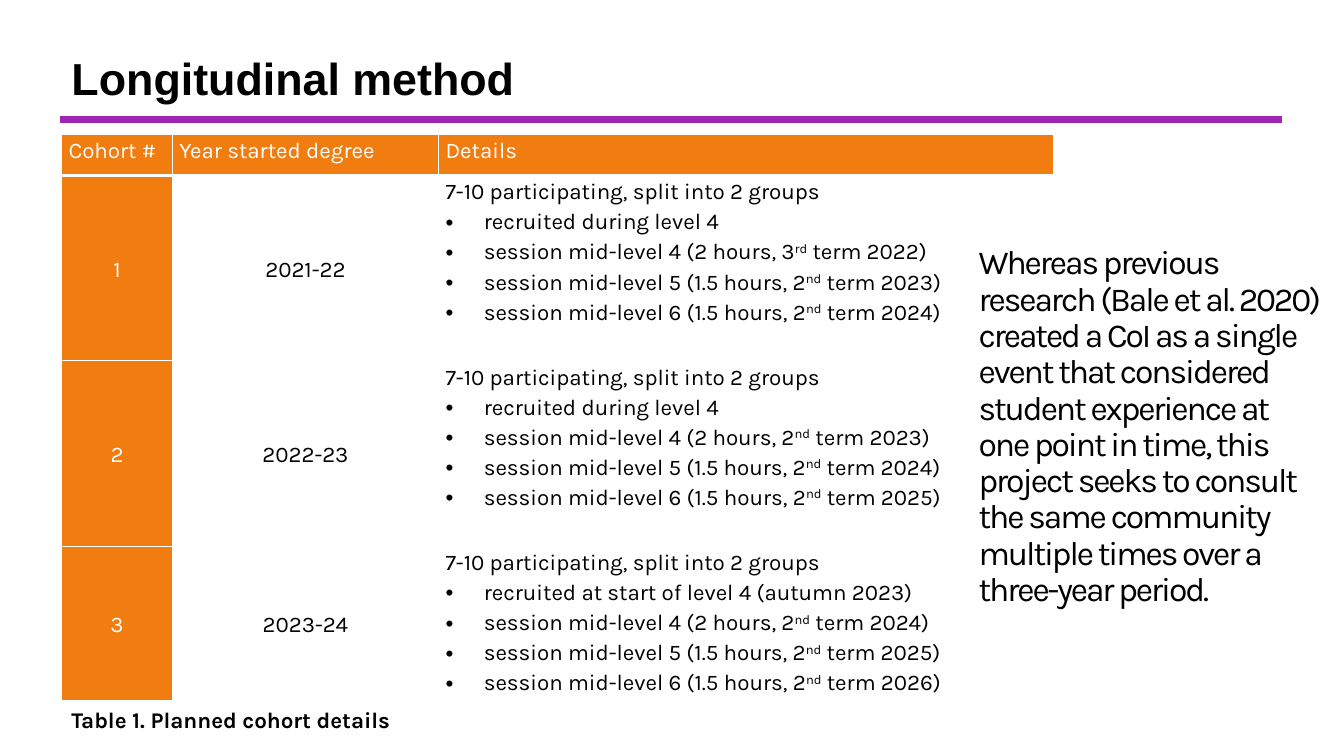
from lxml.etree import SubElement
from pptx import Presentation
from pptx.dml.color import RGBColor
from pptx.enum.shapes import MSO_CONNECTOR, MSO_SHAPE
from pptx.enum.text import MSO_ANCHOR, PP_ALIGN
from pptx.oxml.ns import qn
from pptx.util import Inches, Pt

COLORS = {"black": "000000", "white": "FFFFFF", "orange": "F17C0F", "purple": "9F26B5"}

HEADERS = ["Cohort #", "Year started degree", "Details"]
# Year, recruitment, then (level, hours, ordinal, suffix, term year) per session
COHORTS = [
    ("2021-22", "recruited during level 4",
     [(4, "2", 3, "rd", 2022), (5, "1.5", 2, "nd", 2023), (6, "1.5", 2, "nd", 2024)]),
    ("2022-23", "recruited during level 4",
     [(4, "2", 2, "nd", 2023), (5, "1.5", 2, "nd", 2024), (6, "1.5", 2, "nd", 2025)]),
    ("2023-24", "recruited at start of level 4 (autumn 2023)",
     [(4, "2", 2, "nd", 2024), (5, "1.5", 2, "nd", 2025), (6, "1.5", 2, "nd", 2026)]),
]
COMMENT = (
    "Whereas previous research (Bale et al. 2020) created a CoI as a single event "
    "that considered student experience at one point in time, this project seeks to "
    "consult the same community multiple times over a three-year period."
)


def rgb(name):
    return RGBColor.from_string(COLORS[name])


class Deck:
    """Holds the style and current slide; lengths are percentages of the slide."""

    def __init__(self, width=13.333, height=7.5, font="Karla", size=16):
        self.prs = Presentation()
        self.prs.slide_width, self.prs.slide_height = Inches(width), Inches(height)
        self.font, self.size = font, size
        self.slide = self.prs.slides.add_slide(self.prs.slide_layouts[6])

    def x(self, share):
        return round(self.prs.slide_width * share / 100)

    def y(self, share):
        return round(self.prs.slide_height * share / 100)

    def box(self, x, y, w, h):
        return self.x(x), self.y(y), self.x(w), self.y(h)

    def run(self, p, text, color="black", size=None, font=None, bold=False, **attrs):
        """Add a run; attrs go to its properties, such as baseline or spc."""
        r = p.add_run()
        r.text = text
        r.font.name, r.font.size = font or self.font, Pt(size or self.size)
        r.font.bold = bold
        r.font.color.rgb = rgb(color)
        for key, value in attrs.items():
            r.font._element.set(key, str(value))

    def rule(self, x1, x2, y, color, weight):
        line = self.slide.shapes.add_connector(
            MSO_CONNECTOR.STRAIGHT, self.x(x1), self.y(y), self.x(x2), self.y(y))
        line.line.color.rgb, line.line.width = rgb(color), Pt(weight)
        SubElement(line._element.spPr, qn("a:effectLst"))

    def text(self, box, text, **style):
        tf = self.slide.shapes.add_textbox(*self.box(*box)).text_frame
        tf.word_wrap = True
        self.run(tf.paragraphs[0], text, **style)

    def panel(self, box, text, fill, **style):
        sp = self.slide.shapes.add_shape(MSO_SHAPE.RECTANGLE, *self.box(*box))
        sp.shadow.inherit = False
        sp.fill.solid()
        sp.fill.fore_color.rgb = rgb(fill)
        sp.line.fill.background()
        tf = sp.text_frame
        tf.word_wrap, tf.vertical_anchor = True, MSO_ANCHOR.TOP
        p = tf.paragraphs[0]
        p.alignment, p.line_spacing = PP_ALIGN.LEFT, 0.9
        self.run(p, text, **style)

    def table(self, x, y, cols, rows):
        frame = self.slide.shapes.add_table(
            len(rows), len(cols), *self.box(x, y, sum(cols), sum(rows)))
        table = frame.table
        table.horz_banding = False
        for col, share in zip(table.columns, cols):
            col.width = self.x(share)
        for row, share in zip(table.rows, rows):
            row.height = self.y(share)
        return table

    def cell(self, cell, paragraphs, fill=None, color="black", centered=False, bottom=1):
        """Fill a cell; each paragraph is (bulleted, [(text, superscript), ...])."""
        cell.margin_left = cell.margin_right = Inches(0.07)
        cell.margin_top = cell.margin_bottom = 0
        cell.vertical_anchor = MSO_ANCHOR.MIDDLE if centered else MSO_ANCHOR.TOP
        tc_pr = cell._tc.get_or_add_tcPr()
        for side, weight in {"L": 1, "R": 1, "T": 1, "B": bottom}.items():
            border = SubElement(tc_pr, qn(f"a:ln{side}"), w=str(Pt(weight)))
            solid = SubElement(border, qn("a:solidFill"))
            SubElement(solid, qn("a:srgbClr"), val=COLORS["white"])
        if fill:
            cell.fill.solid()
            cell.fill.fore_color.rgb = rgb(fill)
        else:
            cell.fill.background()
        tf = cell.text_frame
        for i, (bulleted, runs) in enumerate(paragraphs):
            p = tf.add_paragraph() if i else tf.paragraphs[0]
            p.line_spacing = 1.15
            p.alignment = PP_ALIGN.CENTER if centered else PP_ALIGN.LEFT
            if bulleted:
                self.bullet(p)
            for text, superscript in runs:
                self.run(p, text, color, **({"baseline": 30000} if superscript else {}))

    def bullet(self, p, indent=0.38):
        p_pr = p._p.get_or_add_pPr()
        p_pr.set("marL", str(Inches(indent)))
        p_pr.set("indent", str(-Inches(indent)))
        SubElement(p_pr, qn("a:buFont"), typeface="Arial")
        SubElement(p_pr, qn("a:buChar"), char="•")


def plain(text, bulleted=False):
    return bulleted, [(text, False)]


def session(level, hours, ordinal, suffix, year):
    return True, [(f"session mid-level {level} ({hours} hours, {ordinal}", False),
                  (suffix, True), (f" term {year})", False)]


def main():
    deck = Deck()
    deck.rule(4.5, 95.4, 15.87, "purple", 5)
    deck.text((4.58, 92.8, 26.03, 4.8), "Table 1. Planned cohort details", bold=True)
    deck.text((4.58, 6, 86.25, 8.53), "Longitudinal method", size=32, font="Arial", bold=True)

    table = deck.table(4.58, 17.73, [8.25, 19.8, 45.75], [5.47, 24.53, 24.53, 20.4])
    for col, header in enumerate(HEADERS):
        deck.cell(table.cell(0, col), [plain(header)], "orange", "white", bottom=3)
    for row, (year, recruitment, sessions) in enumerate(COHORTS, 1):
        deck.cell(table.cell(row, 0), [plain(str(row))], "orange", "white", centered=True)
        deck.cell(table.cell(row, 1), [plain(year)], centered=True)
        details = [plain("7-10 participating, split into 2 groups"), plain(recruitment, True)]
        deck.cell(table.cell(row, 2), details + [session(*s) for s in sessions])

    deck.panel((72.08, 31.87, 26.92, 53.6), COMMENT, "white", size=24, spc=-150)
    deck.prs.save("out.pptx")


if __name__ == "__main__":
    main()
